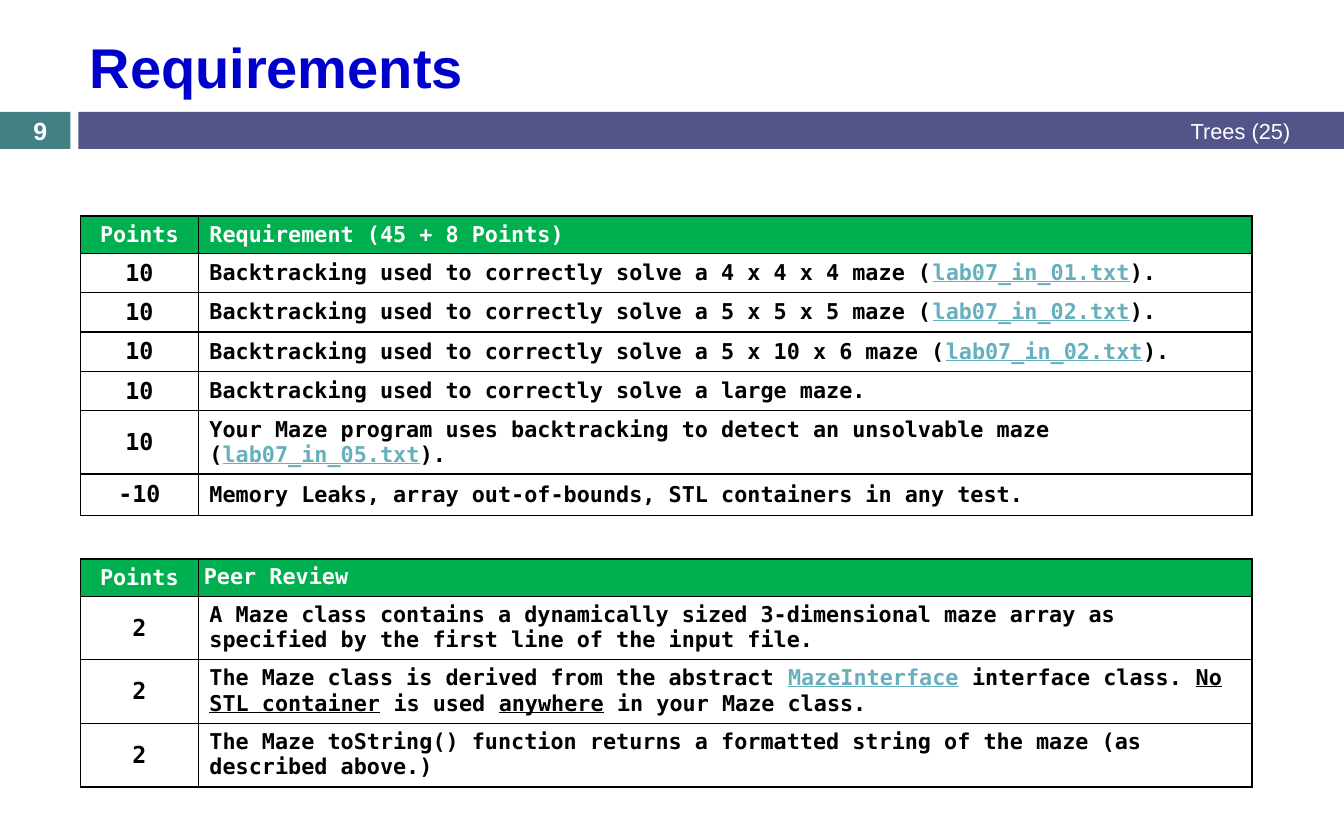
"""Build the Requirements slide with its two points tables."""
from lxml import etree
from pptx import Presentation
from pptx.dml.color import RGBColor
from pptx.enum.shapes import MSO_SHAPE
from pptx.enum.text import MSO_ANCHOR, PP_ALIGN
from pptx.oxml.ns import qn
from pptx.util import Inches, Pt

RECT = MSO_SHAPE.RECTANGLE
MID, TOP = MSO_ANCHOR.MIDDLE, MSO_ANCHOR.TOP
LEFT, MIDST, RIGHT = PP_ALIGN.LEFT, PP_ALIGN.CENTER, PP_ALIGN.RIGHT
COL = ROW = Inches(0.1)
SANS, MONO = "Arial", "DejaVu Sans Mono"
WHITE, BLACK, GREEN, LINK = "FFFFFF", "000000", "00B050", "67AFBD"


def rgb(fore, tone):
    """Give a fill or a font a solid colour."""
    if hasattr(fore, "solid"):
        fore.solid()
        fore = fore.fore_color
    else:
        fore = fore.color
    fore.rgb = RGBColor.from_string(tone)


def write(frame, text, face, size, tone, bold, side):
    """Write text; parts between bars are underlined, with ~ as links."""
    para = frame.paragraphs[0]
    para.alignment = side
    for i, part in enumerate(text.split("|")):
        run = para.add_run()
        run.text = part.lstrip("~")
        font = run.font
        font.name, font.size, font.bold = face, Pt(size), bold
        font.underline = i % 2 == 1
        rgb(font, LINK if part.startswith("~") else tone)


deck = Presentation()
deck.slide_width, deck.slide_height = 120 * COL, 75 * ROW
slide = deck.slides.add_slide(deck.slide_layouts[5])
shapes = slide.shapes

for left, width, tone in [(0, 6.3, "438086"), (7, 113, "53548A")]:
    bar = shapes.add_shape(RECT, int(left * COL), 10 * ROW, int(width * COL), int(3.3 * ROW))
    bar.shadow.inherit = False
    rgb(bar.fill, tone)
    bar.line.fill.background()

title = shapes.title
title.left, title.top = 7 * COL, int(1.9 * ROW)
title.width, title.height = int(109.1 * COL), 8 * ROW
title.text_frame.vertical_anchor = MID
write(title.text_frame, "Requirements", SANS, 36, "0000CC", True, LEFT)

for left, width, text, size, bold, side in [
    (61.7, 54.5, "Trees (25)", 14, False, RIGHT),
    (0, 7.2, "9", 16, True, MIDST),
]:
    box = shapes.add_textbox(int(left * COL), 10 * ROW, int(width * COL), int(3.3 * ROW))
    box.text_frame.word_wrap = True
    box.text_frame.vertical_anchor = MID
    write(box.text_frame, text, SANS, size, WHITE, bold, side)

SOLVE = "Backtracking used to correctly solve a "
tests = [
    ("Points", "Requirement (45 + 8 Points)", 3.3),
    ("10", SOLVE + "4 x 4 x 4 maze (|~lab07_in_01.txt|).", 3.4),
    ("10", SOLVE + "5 x 5 x 5 maze (|~lab07_in_02.txt|).", 3.4),
    ("10", SOLVE + "5 x 10 x 6 maze (|~lab07_in_02.txt|).", 3.4),
    ("10", SOLVE + "large maze.", 3.4),
    ("10", "Your Maze program uses backtracking to detect an unsolvable maze "
           "(|~lab07_in_05.txt|).", 5.6),
    ("-10", "Memory Leaks, array out-of-bounds, STL containers in any test.", 3.7),
]
peers = [
    ("Points", "Peer Review", 3.3),
    ("2", "A Maze class contains a dynamically sized 3-dimensional maze array as "
          "specified by the first line of the input file.", 5.6),
    ("2", "The Maze class is derived from the abstract |~MazeInterface| interface class. "
          "|No STL container| is used |anywhere| in your Maze class.", 5.6),
    ("2", "The Maze toString() function returns a formatted string of the maze "
          "(as described above.)", 5.6),
]

for top, rows, inset, hold in [(19.3, tests, 1, MID), (49.9, peers, 0.5, TOP)]:
    high = sum(row[2] for row in rows)
    table = shapes.add_table(len(rows), 2, int(7.2 * COL), int(top * ROW),
                             int(104.6 * COL), int(high * ROW)).table
    table.columns[0].width = int(10.5 * COL)
    table.columns[1].width = int(94.1 * COL)
    for r, (mark, need, tall) in enumerate(rows):
        table.rows[r].height = int(tall * ROW)
        for c, text in enumerate((mark, need)):
            cell = table.cell(r, c)
            head = r == 0
            cell.vertical_anchor = MID if c == 0 else TOP if head else hold
            if head and c == 1:
                cell.margin_left = int(inset * COL)
            size = 15 if c == 0 and not head else 14
            write(cell.text_frame, text, MONO, size, WHITE if head else BLACK,
                  True, LEFT if c else MIDST)
            props = cell._tc.get_or_add_tcPr()
            for edge in ("a:lnL", "a:lnR", "a:lnT", "a:lnB"):
                line = etree.SubElement(props, qn(edge), w=str(Pt(1)))
                fill = etree.SubElement(line, qn("a:solidFill"))
                etree.SubElement(fill, qn("a:srgbClr"), val=BLACK)
            if head:
                rgb(cell.fill, GREEN)
            else:
                cell.fill.background()

deck.save("out.pptx")
